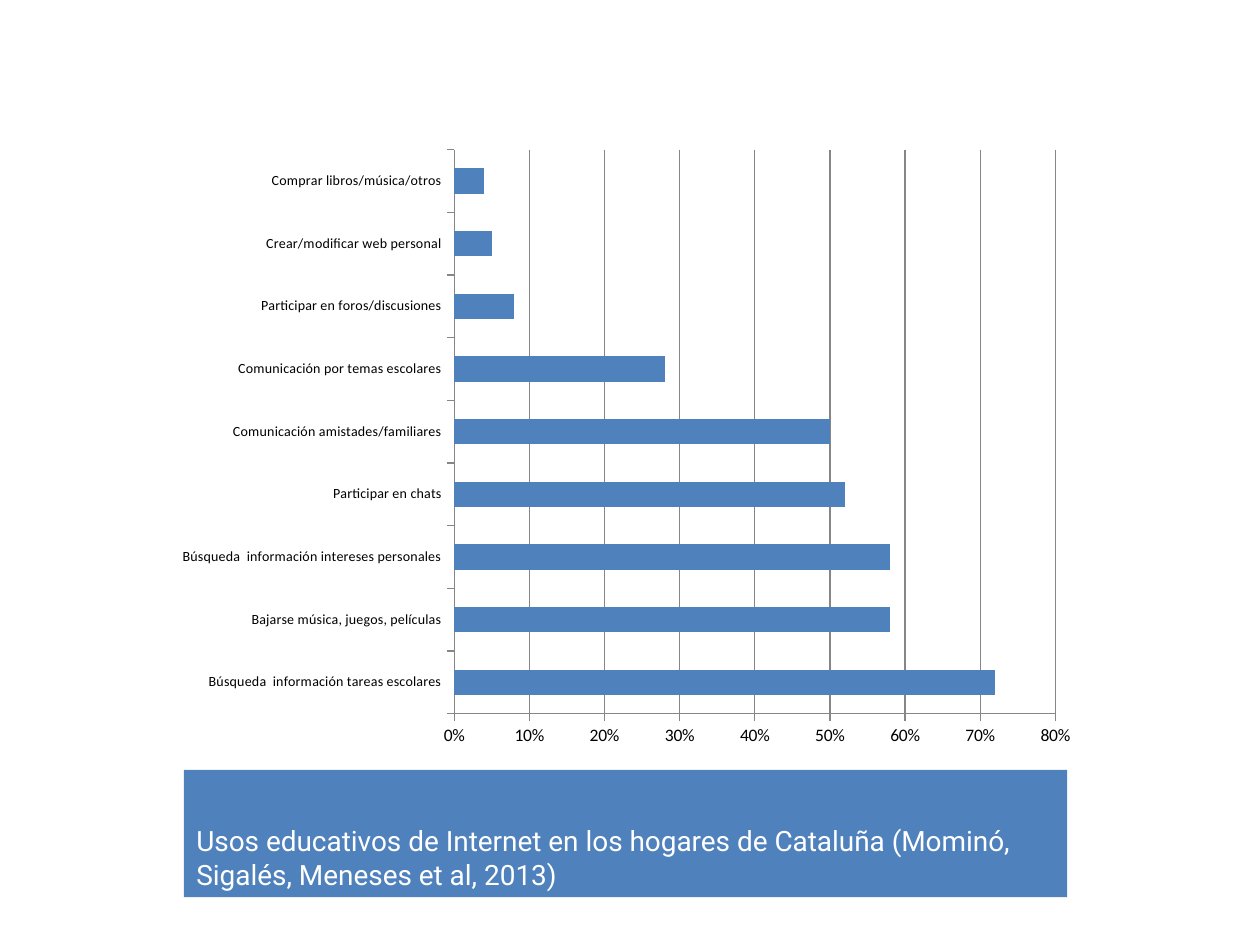
import pptx
import pptx.chart.data
import pptx.dml.color
import pptx.enum.chart
import pptx.enum.text
import pptx.oxml
import pptx.util
from pptx.util import Inches

BLUE = pptx.dml.color.RGBColor(0x4F, 0x81, 0xBD)
GRAY = pptx.dml.color.RGBColor(0x86, 0x86, 0x86)
BLACK = pptx.dml.color.RGBColor(0, 0, 0)
WHITE = pptx.dml.color.RGBColor(0xFF, 0xFF, 0xFF)

USES = [
    ("Búsqueda  información tareas escolares", 0.72),
    ("Bajarse música, juegos, películas", 0.58),
    ("Búsqueda  información intereses personales", 0.58),
    ("Participar en chats", 0.52),
    ("Comunicación amistades/familiares", 0.5),
    ("Comunicación por temas escolares", 0.28),
    ("Participar en foros/discusiones", 0.08),
    ("Crear/modificar web personal", 0.05),
    ("Comprar libros/música/otros", 0.04),
]

prs = pptx.Presentation()
prs.slide_width, prs.slide_height = Inches(10), Inches(7.5)
s = prs.slides.add_slide(prs.slide_layouts[6])

data = pptx.chart.data.CategoryChartData(number_format="0%")
data.categories = [name for name, share in USES]
data.add_series("Series 1", [share for name, share in USES])
chart = s.shapes.add_chart(
    pptx.enum.chart.XL_CHART_TYPE.BAR_CLUSTERED,
    Inches(1.33), Inches(1.09), Inches(7.34), Inches(4.92), data,
).chart
chart.has_legend = False
chart.has_title = False
chart.font.name = "Calibri"
chart.font.size = pptx.util.Pt(10)
chart.font.color.rgb = BLACK

plot = chart.plots[0]
plot.gap_width = 150
plot.vary_by_categories = False
fill = plot.series[0].format.fill
fill.solid()
fill.fore_color.rgb = BLUE

for axis, size in ((chart.category_axis, 8), (chart.value_axis, 10)):
    axis.major_tick_mark = pptx.enum.chart.XL_TICK_MARK.OUTSIDE
    axis.minor_tick_mark = pptx.enum.chart.XL_TICK_MARK.NONE
    axis.format.line.color.rgb = GRAY
    axis.tick_labels.font.name = "Calibri"
    axis.tick_labels.font.size = pptx.util.Pt(size)
    axis.tick_labels.font.color.rgb = BLACK

axis = chart.value_axis
axis.minimum_scale, axis.maximum_scale, axis.major_unit = 0, 0.8, 0.1
axis.tick_labels.number_format = "0%"
axis.tick_labels.number_format_is_linked = False
axis.has_major_gridlines = True
axis.major_gridlines.format.line.color.rgb = GRAY

area = plot._element.getparent()
for old in area.findall(pptx.oxml.ns.qn("c:layout")):
    area.remove(old)
area.insert(0, pptx.oxml.parse_xml(
    f'<c:layout {pptx.oxml.ns.nsdecls("c")}><c:manualLayout>'
    '<c:layoutTarget val="inner"/><c:xMode val="edge"/><c:yMode val="edge"/>'
    '<c:x val="0.31"/><c:y val="0.02"/><c:w val="0.65"/><c:h val="0.91"/>'
    '</c:manualLayout></c:layout>'
))

sp = s.shapes.add_shape(
    pptx.enum.shapes.MSO_SHAPE.RECTANGLE,
    Inches(1.46), Inches(6.11), Inches(7.01), Inches(1.01),
)
sp.shadow.inherit = False
sp.fill.solid()
sp.fill.fore_color.rgb = BLUE
sp.line.fill.background()
tf = sp.text_frame
tf.word_wrap = True
tf.vertical_anchor = pptx.enum.text.MSO_ANCHOR.BOTTOM
p = tf.paragraphs[0]
p.text = "Usos educativos de Internet en los hogares de Cataluña (Mominó, Sigalés, Meneses et al, 2013)"
p.alignment = pptx.enum.text.PP_ALIGN.LEFT
p.font.name = "Roboto"
p.font.size = pptx.util.Pt(16)
p.font.color.rgb = WHITE

prs.save("out.pptx")
